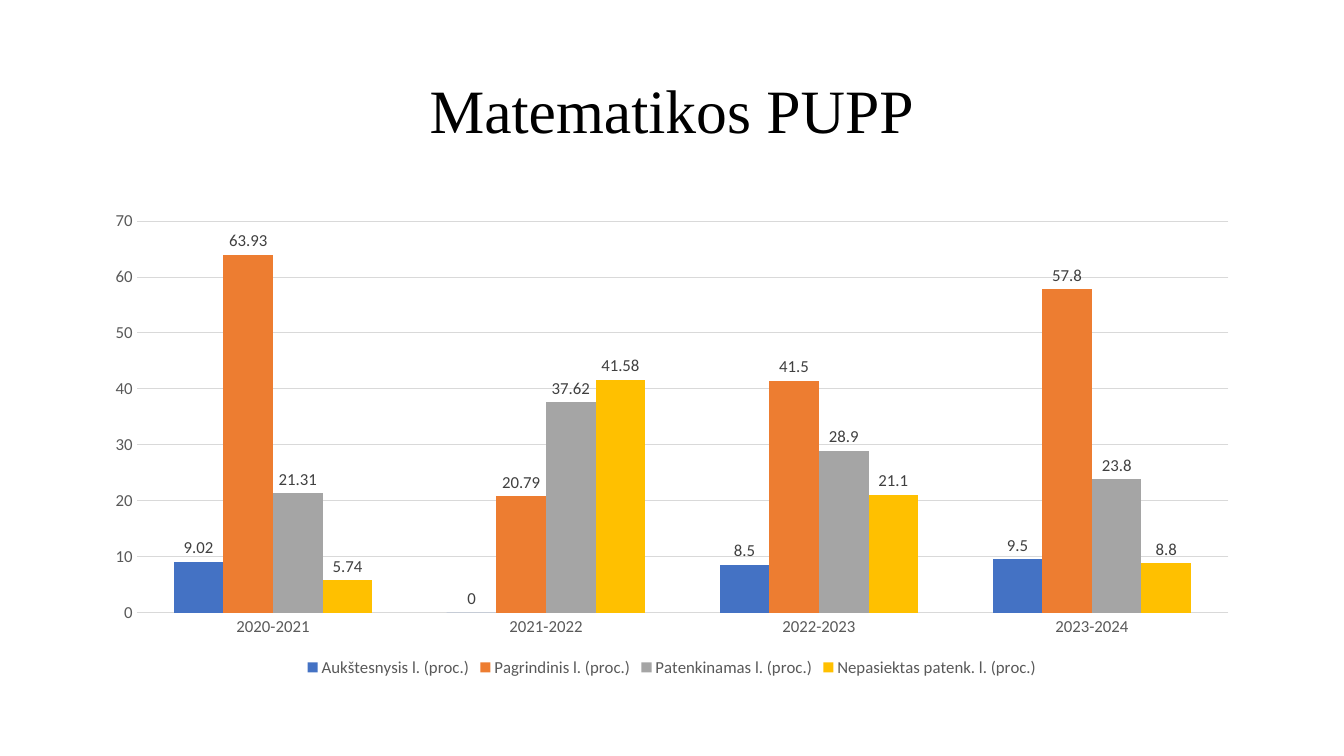
"""Build the slide on results of the mathematics PUPP exam."""
from pptx import Presentation
from pptx.chart.data import CategoryChartData
from pptx.dml.color import RGBColor
from pptx.enum.chart import XL_CHART_TYPE, XL_LABEL_POSITION, XL_LEGEND_POSITION, XL_TICK_MARK
from pptx.enum.text import MSO_ANCHOR, PP_ALIGN
from pptx.util import Pt

CLUSTERED = XL_CHART_TYPE.COLUMN_CLUSTERED
OUTSIDE_END = XL_LABEL_POSITION.OUTSIDE_END
BOTTOM = XL_LEGEND_POSITION.BOTTOM
NO_TICK = XL_TICK_MARK.NONE
MIDDLE = MSO_ANCHOR.MIDDLE
CENTER = PP_ALIGN.CENTER

SCHOOL_YEARS = ["2020-2021", "2021-2022", "2022-2023", "2023-2024"]
LEVELS = [
    ("Aukštesnysis l. (proc.)", "4472C4", [9.02, 0, 8.5, 9.5]),
    ("Pagrindinis l. (proc.)", "ED7D31", [63.93, 20.79, 41.5, 57.8]),
    ("Patenkinamas l. (proc.)", "A5A5A5", [21.31, 37.62, 28.9, 23.8]),
    ("Nepasiektas patenk. l. (proc.)", "FFC000", [5.74, 41.58, 21.1, 8.8]),
]


def rgb(value):
    return RGBColor.from_string(value)


def set_font(font, name, size, color):
    font.name = name
    font.size = Pt(size)
    font.color.rgb = rgb(color)


def write(frame, text, font="Calibri", size=12, color="000000", align=CENTER, spacing=1.0):
    paragraph = frame.paragraphs[0]
    paragraph.alignment = align
    paragraph.line_spacing = spacing
    run = paragraph.add_run()
    run.text = text
    set_font(run.font, font, size, color)


class ResultsSlide:
    chart_font = "Calibri"
    chart_size = 12
    axis_color = "595959"
    label_color = "404040"
    line_color = "D9D9D9"

    def __init__(self, slide):
        self.slide = slide

    def title(self, text, left, top, width, height):
        heading = self.slide.shapes.add_textbox(Pt(left), Pt(top), Pt(width), Pt(height))
        frame = heading.text_frame
        frame.word_wrap = True
        frame.vertical_anchor = MIDDLE
        write(frame, text, font="Times New Roman", size=44, spacing=0.9)

    def chart_text(self, font, color):
        set_font(font, self.chart_font, self.chart_size, color)

    def chart_line(self, line):
        line.color.rgb = rgb(self.line_color)
        line.width = Pt(0.75)

    def columns(self, categories, levels, left, top, width, height):
        results = CategoryChartData()
        results.categories = categories
        for name, _, values in levels:
            results.add_series(name, values)
        chart = self.slide.shapes.add_chart(
            CLUSTERED, Pt(left), Pt(top), Pt(width), Pt(height), results
        ).chart
        set_font(chart.font, self.chart_font, 10, "000000")
        chart.has_title = False
        self.axes(chart)
        self.legend(chart)

        plot = chart.plots[0]
        plot.gap_width = 150
        plot.overlap = 0
        plot.vary_by_categories = False
        for series, (_, color, _) in zip(plot.series, levels):
            series.invert_if_negative = False
            series.format.fill.solid()
            series.format.fill.fore_color.rgb = rgb(color)
            labels = series.data_labels
            labels.show_value = True
            labels.position = OUTSIDE_END
            self.chart_text(labels.font, self.label_color)

    def axes(self, chart):
        years, percent = chart.category_axis, chart.value_axis
        for axis in (years, percent):
            axis.major_tick_mark = axis.minor_tick_mark = NO_TICK
            self.chart_text(axis.tick_labels.font, self.axis_color)
        self.chart_line(years.format.line)
        percent.format.line.fill.background()
        percent.minimum_scale = 0
        percent.maximum_scale = 70
        percent.major_unit = 10
        percent.has_major_gridlines = True
        self.chart_line(percent.major_gridlines.format.line)

    def legend(self, chart):
        chart.has_legend = True
        chart.legend.position = BOTTOM
        chart.legend.include_in_layout = False
        self.chart_text(chart.legend.font, self.axis_color)


def main():
    presentation = Presentation()
    presentation.slide_width = Pt(960)
    presentation.slide_height = Pt(540)
    results = ResultsSlide(presentation.slides.add_slide(presentation.slide_layouts[6]))
    results.title("Matematikos PUPP", 66, 28.75, 828, 104.4)
    results.columns(SCHOOL_YEARS, LEVELS, 66, 144, 828, 342.7)
    presentation.save("out.pptx")


if __name__ == "__main__":
    main()
